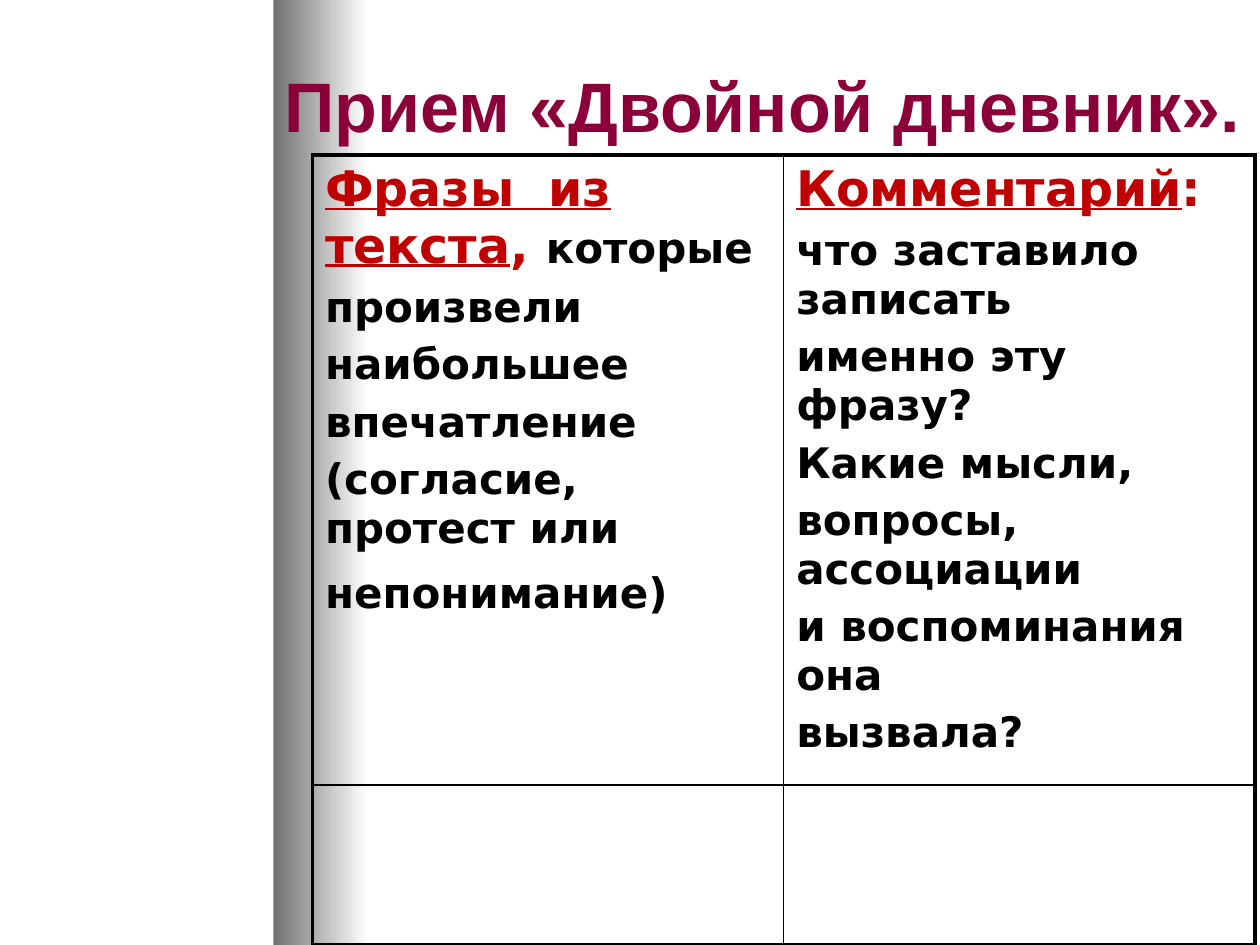
import dataclasses

import pptx
import pptx.dml.color
import pptx.enum.shapes
import pptx.enum.text
import pptx.oxml
import pptx.oxml.ns
import pptx.util
from pptx.dml.color import RGBColor
from pptx.util import Inches, Pt

BLACK = RGBColor(0x00, 0x00, 0x00)
WHITE = RGBColor(0xFF, 0xFF, 0xFF)
GREY = RGBColor(0x70, 0x70, 0x70)
PLUM = RGBColor(0x8C, 0x00, 0x39)
RED = RGBColor(0xC0, 0x00, 0x00)
TABLE_FONT = "DejaVu Sans"
THICK, THIN = 2.25, 1


@dataclasses.dataclass(frozen=True)
class Span:
    text: str
    size: float = 24
    color: RGBColor = BLACK
    underline: bool = False


@dataclasses.dataclass(frozen=True)
class Line:
    spans: tuple[Span, ...]
    space_before: float = 4.8


def plain(text: str, space_before: float = 4.8) -> Line:
    return Line((Span(text),), space_before)


PHRASES = (
    Line((Span("Фразы  из текста", 28, RED, True), Span(", ", 28, RED),
          Span("которые")), 0),
    plain("произвели"),
    plain("наибольшее"),
    plain("впечатление"),
    plain("(согласие, протест или"),
    plain("непонимание)", 9.4),
)
COMMENTS = (
    Line((Span("Комментарий", 28, RED, True), Span(":", 28, RED)), 0),
    plain("что заставило записать"),
    plain("именно эту фразу?"),
    plain("Какие мысли,"),
    plain("вопросы, ассоциации"),
    plain("и воспоминания она"),
    plain("вызвала?"),
)


def add_shaded_band(page) -> None:
    """Draw the vertical grey-to-white band behind the title."""
    band = page.shapes.add_shape(
        pptx.enum.shapes.MSO_SHAPE.RECTANGLE,
        Inches(2.17), 0, Inches(0.75), Inches(7.5))
    band.shadow.inherit = False
    band.line.fill.background()
    band.fill.gradient()
    band.fill.gradient_angle = 0
    for stop, color, position in zip(
            band.fill.gradient_stops, (GREY, WHITE), (0, 1)):
        stop.color.rgb = color
        stop.position = position
    page.shapes.title.element.addprevious(band.element)


def set_title(page, text: str) -> None:
    title = page.shapes.title
    title.left, title.top = 0, Inches(0.11)
    title.width, title.height = Inches(10), Inches(1.44)
    frame = title.text_frame
    frame.text = text
    frame.margin_left, frame.margin_right = Inches(2.1), 0
    frame.vertical_anchor = pptx.enum.text.MSO_ANCHOR.MIDDLE
    paragraph = frame.paragraphs[0]
    paragraph.alignment = pptx.enum.text.PP_ALIGN.CENTER
    font = paragraph.font
    font.name, font.size, font.bold = "Arial", Pt(40), True
    font.color.rgb = PLUM


def fill_cell(cell, lines: tuple[Line, ...]) -> None:
    frame = cell.text_frame
    for index, line in enumerate(lines):
        paragraph = frame.add_paragraph() if index else frame.paragraphs[0]
        paragraph.space_before = Pt(line.space_before)
        paragraph.font.name = TABLE_FONT
        paragraph.font.bold = True
        for span in line.spans:
            run = paragraph.add_run()
            run.text = span.text
            run.font.size = Pt(span.size)
            run.font.color.rgb = span.color
            run.font.underline = span.underline


def set_borders(cell, widths: dict[str, float]) -> None:
    """Put solid black borders, in schema order, ahead of the cell's fill."""
    properties = cell._tc.get_or_add_tcPr()
    for index, (side, width) in enumerate(widths.items()):
        properties.insert(index, pptx.oxml.parse_xml(
            f'<a:{side} {pptx.oxml.ns.nsdecls("a")} w="{Pt(width)}">'
            f'<a:solidFill><a:srgbClr val="{BLACK}"/></a:solidFill>'
            f'</a:{side}>'))


def add_diary_table(page) -> None:
    table = page.shapes.add_table(
        2, 2, Inches(2.48), Inches(1.23), Inches(7.48), Inches(6.27)).table
    table.first_row = table.horz_banding = False
    for column in table.columns:
        column.width = Inches(3.74)
    for row, height in zip(table.rows, (5, 1.27)):
        row.height = Inches(height)
    for row in range(2):
        for column in range(2):
            cell = table.cell(row, column)
            cell.fill.background()
            set_borders(cell, {
                "lnL": THIN if column else THICK,
                "lnR": THICK if column else THIN,
                "lnT": THIN if row else THICK,
                "lnB": THICK if row else THIN,
            })
    fill_cell(table.cell(0, 0), PHRASES)
    fill_cell(table.cell(0, 1), COMMENTS)


def main() -> None:
    deck = pptx.Presentation()
    deck.slide_width, deck.slide_height = Inches(10), Inches(7.5)
    page = deck.slides.add_slide(deck.slide_layouts.get_by_name("Title Only"))
    add_shaded_band(page)
    set_title(page, "Прием «Двойной дневник».")
    add_diary_table(page)
    deck.save("out.pptx")


if __name__ == "__main__":
    main()
